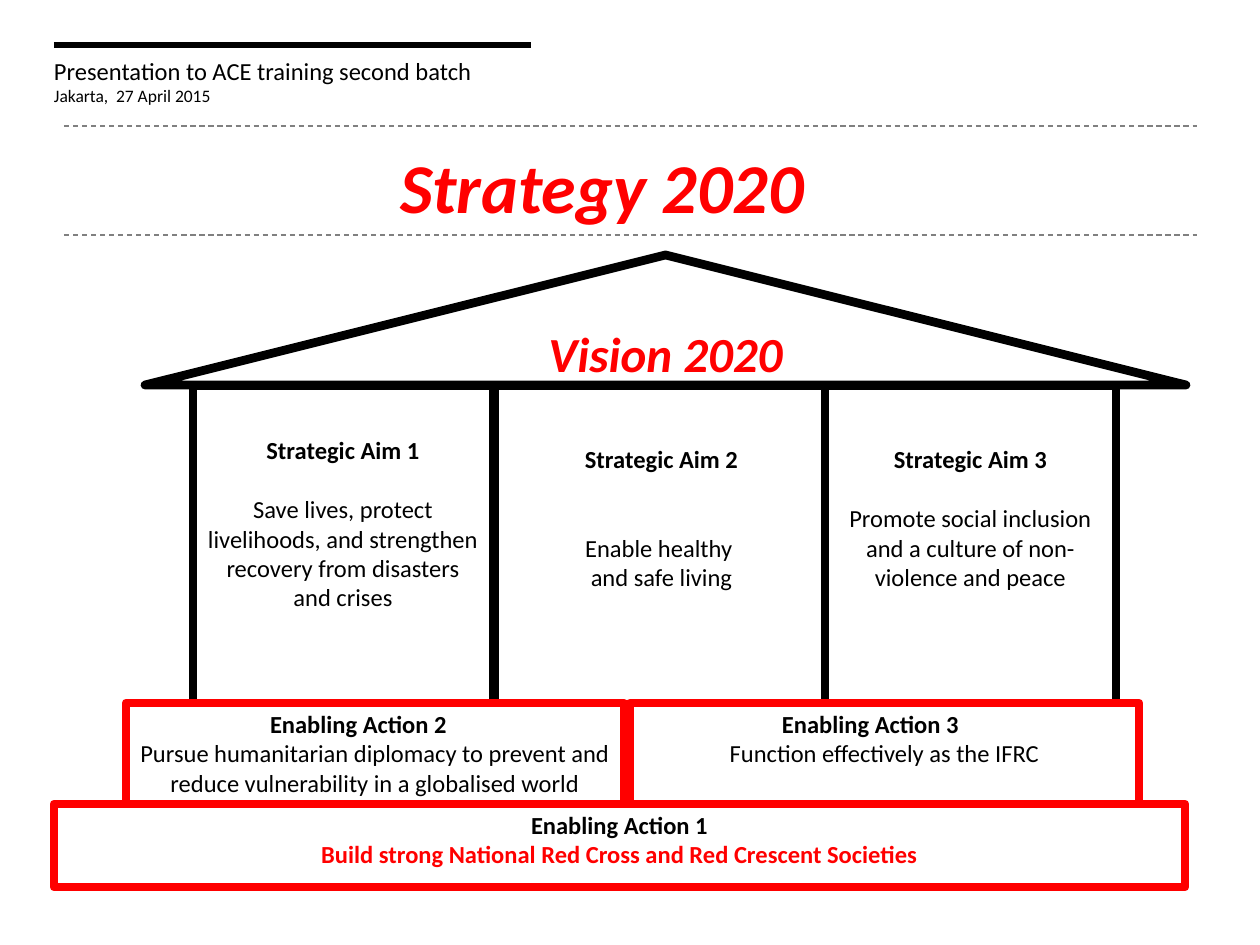
from dataclasses import dataclass

import lxml.etree
import pptx
import pptx.dml.color
import pptx.enum.dml
import pptx.enum.shapes
import pptx.enum.text
import pptx.oxml.ns
import pptx.util

EMU_PER_PX = 914400 / 126
BLACK, WHITE, RED, GREY = "000000", "FFFFFF", "FF0000", "808080"
LEFT, CENTER = pptx.enum.text.PP_ALIGN.LEFT, pptx.enum.text.PP_ALIGN.CENTER
TOP, MIDDLE = pptx.enum.text.MSO_ANCHOR.TOP, pptx.enum.text.MSO_ANCHOR.MIDDLE
RECTANGLE = pptx.enum.shapes.MSO_SHAPE.RECTANGLE
TRIANGLE = pptx.enum.shapes.MSO_SHAPE.ISOSCELES_TRIANGLE
PILLAR_TOP = 386


@dataclass
class Box:
    left: int
    top: int
    width: int
    height: int


@dataclass
class Pillar:
    left: int
    width: int
    height: int
    text_top: int
    heading: str
    aim: str
    gap: int = 17  # points between heading and aim


@dataclass
class Foundation:
    box: Box
    heading: str
    action: str
    indent: int = 0  # px; zero keeps the heading centred
    action_style: tuple[str, bool] = (BLACK, False)


PILLARS = [
    Pillar(193, 300, 377, 49, "Strategic Aim 1",
           "Save lives, protect livelihoods, and strengthen recovery from disasters and crises"),
    Pillar(495, 333, 387, 58, "Strategic Aim 2", "Enable healthy \vand safe living", gap=34),
    Pillar(825, 291, 336, 58, "Strategic Aim 3",
           "Promote social inclusion and a culture of non-violence and peace"),
]
FOUNDATIONS = [
    Foundation(Box(126, 703, 498, 102), "Enabling Action 2",
               "Pursue humanitarian diplomacy to prevent and reduce vulnerability in a globalised world",
               indent=131),
    Foundation(Box(630, 703, 509, 116), "Enabling Action 3",
               "Function effectively as the IFRC", indent=139),
    Foundation(Box(54, 804, 1131, 83), "Enabling Action 1",
               "Build strong National Red Cross and Red Crescent Societies",
               action_style=(RED, True)),
]


def px(length: int) -> pptx.util.Emu:
    return pptx.util.Emu(round(length * EMU_PER_PX))


def rgb(color: str) -> pptx.dml.color.RGBColor:
    return pptx.dml.color.RGBColor.from_string(color)


def edges(box: Box) -> list[pptx.util.Emu]:
    return [px(box.left), px(box.top), px(box.width), px(box.height)]


def set_frame(shape, anchor=TOP, side: int = 13, top: int = 6) -> None:
    frame = shape.text_frame
    frame.word_wrap = True
    frame.vertical_anchor = anchor
    frame.margin_left = frame.margin_right = px(side)
    frame.margin_top = px(top)
    frame.margin_bottom = px(min(top, 6))


def write(shape, text: str, *, size: int = 14, color: str = BLACK, bold: bool = False,
          italic: bool = False, align=CENTER, gap: int = 0, indent: int = 0) -> None:
    """Fill the first paragraph of a shape, or add another below it."""
    frame = shape.text_frame
    first = not frame.text
    paragraph = frame.paragraphs[0] if first else frame.add_paragraph()
    paragraph.text = text
    paragraph.alignment = align
    if gap and not first:
        paragraph.space_before = pptx.util.Pt(gap)
    if indent:
        paragraph._p.get_or_add_pPr().set("marL", str(px(indent)))
    font = paragraph.font
    font.name, font.size = "Calibri", pptx.util.Pt(size)
    font.bold, font.italic = bold, italic
    font.color.rgb = rgb(color)


def add_block(slide, box: Box, color: str, kind=RECTANGLE):
    block = slide.shapes.add_shape(kind, *edges(box))
    block.shadow.inherit = False
    block.fill.solid()
    block.fill.fore_color.rgb = rgb(WHITE)
    block.line.color.rgb = rgb(color)
    block.line.width = pptx.util.Pt(5)
    return block


def add_rule(slide, left: int, right: int, y: int, color: str, weight: float,
             dashed: bool = False) -> None:
    rule = slide.shapes.add_connector(
        pptx.enum.shapes.MSO_CONNECTOR.STRAIGHT, px(left), px(y), px(right), px(y))
    rule.line.color.rgb = rgb(color)
    rule.line.width = pptx.util.Pt(weight)
    if dashed:
        rule.line.dash_style = pptx.enum.dml.MSO_LINE.DASH
    lxml.etree.SubElement(rule._element.spPr, pptx.oxml.ns.qn("a:effectLst"))


def add_header(slide) -> None:
    add_rule(slide, 54, 531, 45, BLACK, 3)
    for y in (126, 235):
        add_rule(slide, 64, 1197, y, GREY, 0.75, dashed=True)
    occasion = slide.shapes.add_textbox(*edges(Box(54, 56, 476, 50)))
    set_frame(occasion, side=0, top=0)
    write(occasion, "Presentation to ACE training second batch", align=LEFT)
    write(occasion, "Jakarta,  27 April 2015", size=10, align=LEFT)

    title = slide.shapes.title
    title.left, title.top, title.width, title.height = edges(Box(118, 106, 968, 158))
    set_frame(title, MIDDLE)
    write(title, "Strategy 2020", size=40, color=RED, bold=True, italic=True)


def add_pillar(slide, pillar: Pillar) -> None:
    block = add_block(slide, Box(pillar.left, PILLAR_TOP, pillar.width, pillar.height), BLACK)
    set_frame(block, top=pillar.text_top)
    write(block, pillar.heading, bold=True)
    write(block, pillar.aim, gap=pillar.gap)


def add_foundation(slide, foundation: Foundation) -> None:
    block = add_block(slide, foundation.box, RED)
    set_frame(block)
    write(block, foundation.heading, bold=True, indent=foundation.indent,
          align=LEFT if foundation.indent else CENTER)
    color, bold = foundation.action_style
    write(block, foundation.action, color=color, bold=bold)


def main() -> None:
    deck = pptx.Presentation()
    deck.slide_width, deck.slide_height = px(1260), px(945)
    slide = deck.slides.add_slide(deck.slide_layouts[5])
    add_header(slide)
    roof = add_block(slide, Box(145, 255, 1041, 130), BLACK, TRIANGLE)
    set_frame(roof, MIDDLE)
    write(roof, "Vision 2020", size=28, color=RED, bold=True, italic=True)
    for pillar in PILLARS:
        add_pillar(slide, pillar)
    for foundation in FOUNDATIONS:
        add_foundation(slide, foundation)
    deck.save("out.pptx")


if __name__ == "__main__":
    main()
